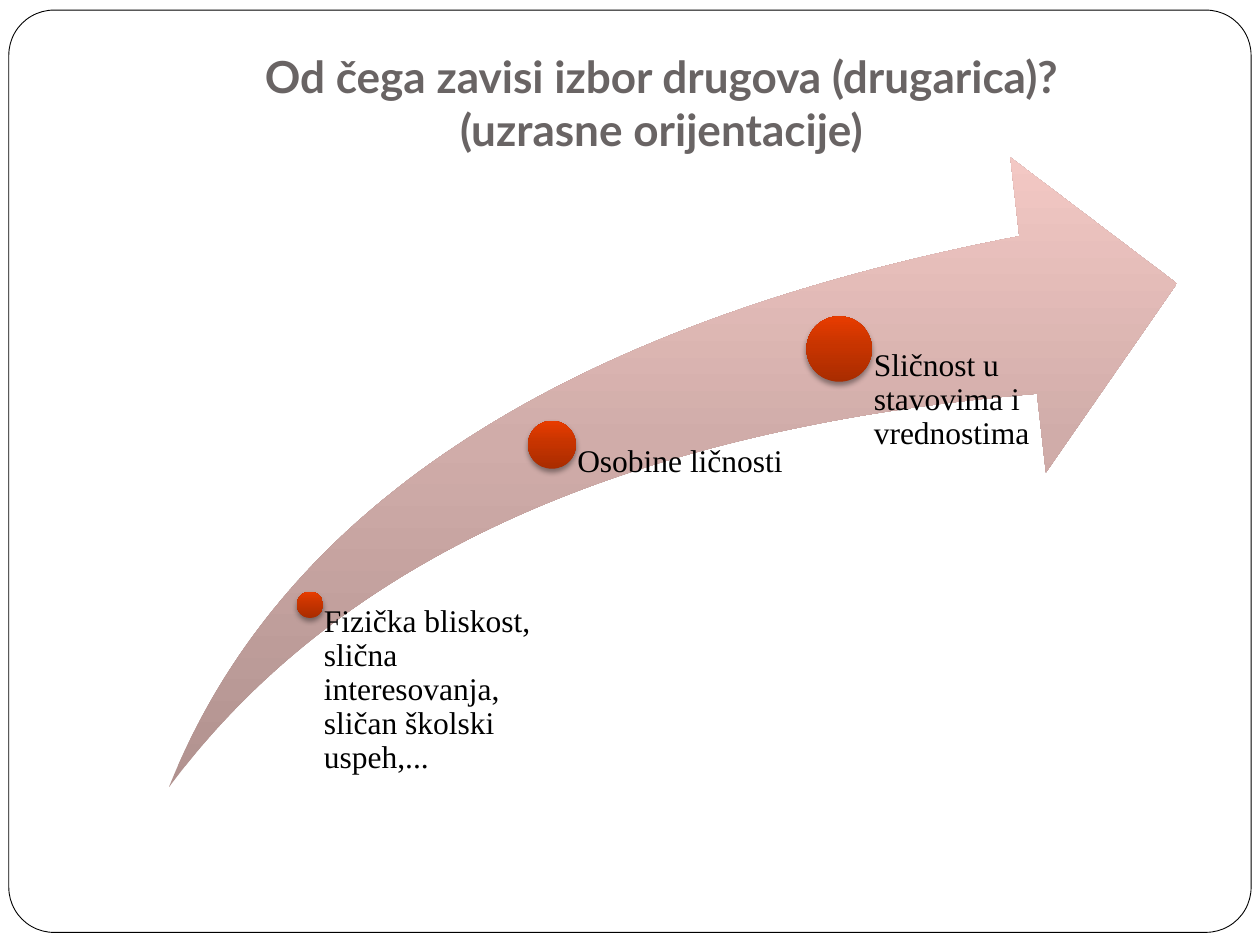
from copy import deepcopy
from dataclasses import dataclass

from lxml.etree import SubElement
from pptx import Presentation
from pptx.dml.color import RGBColor
from pptx.enum.shapes import MSO_SHAPE
from pptx.enum.text import MSO_ANCHOR, PP_ALIGN
from pptx.oxml.ns import qn
from pptx.util import Inches, Pt


@dataclass(frozen=True)
class Theme:
    paper: str = "FFFFFF"
    ink: str = "000000"
    title: str = "696464"
    arrow: tuple = ("B1928F", "D0ACA9", "F3C8C4")
    dot: tuple = ("A92C00", "C73400", "E83C00")
    title_font: str = "Lato"
    label_font: str = "Times New Roman"
    title_size: float = 25.2
    label_size: float = 18


@dataclass(frozen=True)
class Milestone:
    text: str
    center_x: float
    center_y: float
    diameter: float
    label_width: float


THEME = Theme()
ARROW_BOX = (1.34, 1.25, 8, 5)
ARROW_BOTTOM = ARROW_BOX[1] + ARROW_BOX[3]
GRADIENT_POSITIONS = (0, 0.55, 1)
INSET_PER_DIAMETER = 0.53

MILESTONES = (
    Milestone("Fizička bliskost, slična interesovanja, sličan školski uspeh,...",
              2.46, 4.8, 0.21, 1.86),
    Milestone("Osobine ličnosti", 4.38, 3.53, 0.38, 1.92),
    Milestone("Sličnost u stavovima i vrednostima", 6.66, 2.77, 0.52, 1.92),
)


def add_plain_shape(slide, kind: MSO_SHAPE, box: tuple):
    """Add a preset shape without outline or shadow."""
    shape = slide.shapes.add_shape(kind, *map(Inches, box))
    shape.shadow.inherit = False
    shape.line.fill.background()
    return shape


def fill_upward(shape, colors: tuple) -> None:
    """Fill with a three-stop gradient running from bottom to top."""
    shape.fill.gradient()
    shape.fill.gradient_angle = 90
    stop_list = shape._element.spPr.find(".//" + qn("a:gsLst"))
    stop_list.append(deepcopy(stop_list[-1]))
    for stop, position, color in zip(shape.fill.gradient_stops, GRADIENT_POSITIONS, colors):
        stop.position = position
        stop.color.rgb = RGBColor.from_string(color)


def add_soft_shadow(shape) -> None:
    effects = shape._element.spPr.find(qn("a:effectLst"))
    shadow = SubElement(effects, qn("a:outerShdw"), blurRad=str(Pt(3.1)),
                        dist=str(Pt(2)), dir="5400000", rotWithShape="0")
    color = SubElement(shadow, qn("a:srgbClr"), val=THEME.ink)
    SubElement(color, qn("a:alpha"), val="38000")


def add_text(slide, text: str, box: tuple, *, font: str, size: float, color: str,
             bold: bool = False, align=PP_ALIGN.LEFT, anchor=MSO_ANCHOR.TOP,
             insets: tuple = (0, 0, 0, 0), line_spacing: float = 1.0) -> None:
    frame = slide.shapes.add_textbox(*map(Inches, box)).text_frame
    frame.word_wrap = True
    frame.vertical_anchor = anchor
    (frame.margin_left, frame.margin_top,
     frame.margin_right, frame.margin_bottom) = map(Inches, insets)
    paragraph = frame.paragraphs[0]
    paragraph.alignment = align
    paragraph.line_spacing = line_spacing
    for index, line in enumerate(text.split("\n")):
        if index:
            paragraph.add_line_break()
        run = paragraph.add_run()
        run.text = line
        run.font.name = font
        run.font.size = Pt(size)
        run.font.bold = bold
        run.font.color.rgb = RGBColor.from_string(color)


def add_milestone(slide, milestone: Milestone) -> None:
    """Draw a dot, with its label starting at the centre of the dot."""
    diameter = milestone.diameter
    left, top = milestone.center_x, milestone.center_y
    dot = add_plain_shape(slide, MSO_SHAPE.OVAL,
                          (left - diameter / 2, top - diameter / 2, diameter, diameter))
    fill_upward(dot, THEME.dot)
    add_soft_shadow(dot)
    add_text(slide, milestone.text,
             (left, top, milestone.label_width, ARROW_BOTTOM - top),
             font=THEME.label_font, size=THEME.label_size, color=THEME.ink,
             insets=(diameter * INSET_PER_DIAMETER, 0, 0, 0), line_spacing=0.9)


def main() -> None:
    presentation = Presentation()
    presentation.slide_width, presentation.slide_height = Inches(10), Inches(7.5)
    slide = presentation.slides.add_slide(presentation.slide_layouts[6])

    # Rounded frame
    frame = add_plain_shape(slide, MSO_SHAPE.ROUNDED_RECTANGLE, (0.07, 0.08, 9.86, 7.32))
    frame.adjustments[0] = 0.049
    frame.fill.solid()
    frame.fill.fore_color.rgb = RGBColor.from_string(THEME.paper)
    frame.line.color.rgb = RGBColor.from_string(THEME.ink)
    frame.line.width = Pt(0.5)

    # Title
    add_text(slide, "Od čega zavisi izbor drugova (drugarica)?\n(uzrasne orijentacije)",
             (1, 0.3, 8.5, 1.03), font=THEME.title_font, size=THEME.title_size,
             color=THEME.title, bold=True, align=PP_ALIGN.CENTER,
             anchor=MSO_ANCHOR.BOTTOM, insets=(0.1, 0.05, 0.1, 0.1))

    # Rising arrow
    arrow = add_plain_shape(slide, MSO_SHAPE.SWOOSH_ARROW, ARROW_BOX)
    arrow.adjustments[0] = arrow.adjustments[1] = 0.25
    fill_upward(arrow, THEME.arrow)

    # Milestones along the arrow
    for milestone in MILESTONES:
        add_milestone(slide, milestone)

    presentation.save("out.pptx")


if __name__ == "__main__":
    main()
